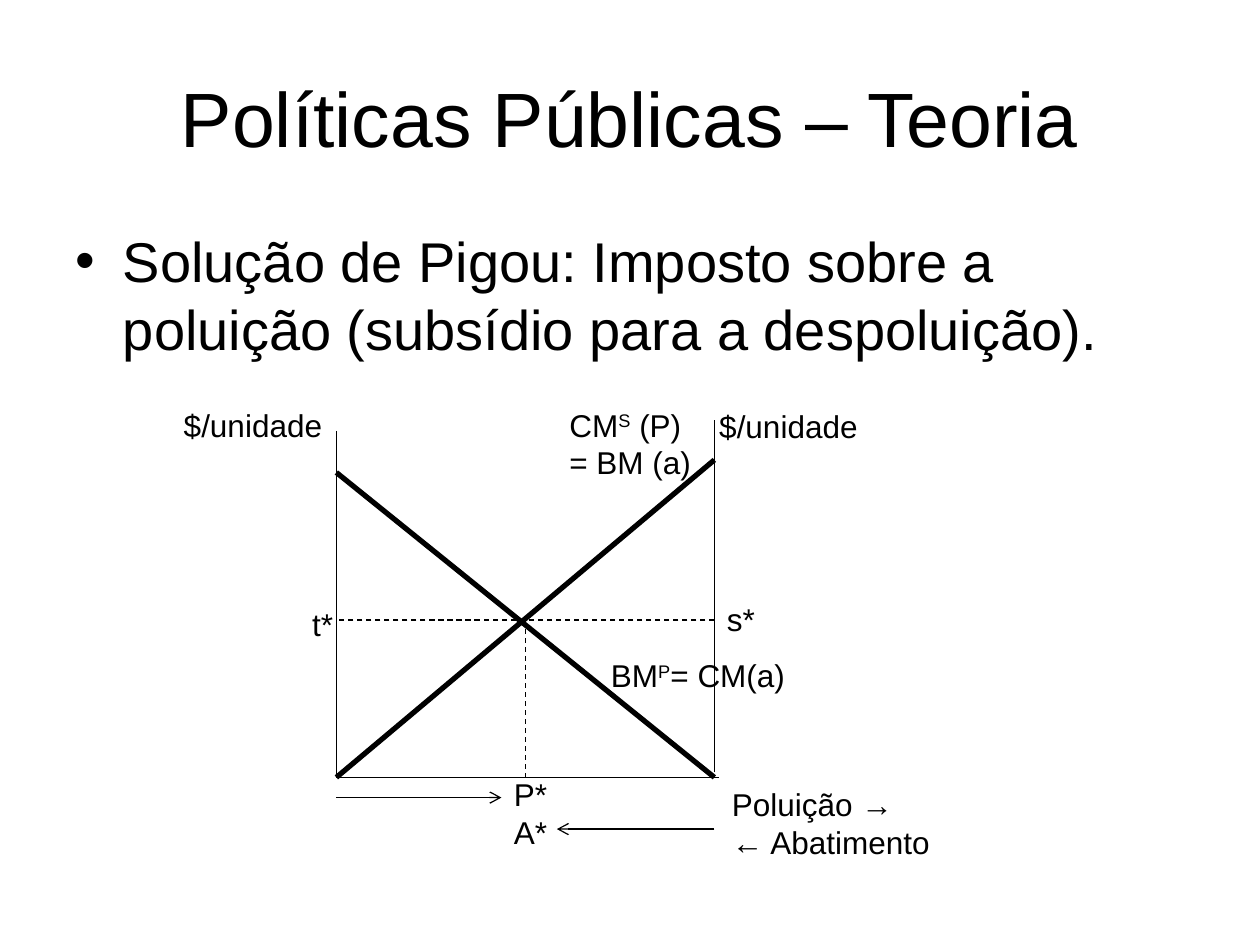
from lxml import etree
from pptx import Presentation
from pptx.dml.color import RGBColor
from pptx.enum.dml import MSO_LINE
from pptx.enum.shapes import MSO_CONNECTOR
from pptx.enum.text import MSO_ANCHOR, MSO_AUTO_SIZE, PP_ALIGN
from pptx.oxml.ns import qn
from pptx.util import Inches, Pt

STRAIGHT = MSO_CONNECTOR.STRAIGHT
DASH = MSO_LINE.DASH
COLORS = {"ink": "000000", "background": "FFFFFF"}
FONT = "Arial"

TITLE = "Políticas Públicas – Teoria"
BODY = "Solução de Pigou: Imposto sobre a poluição (subsídio para a despoluição)."

# Key coordinates of the diagram, in inches
LEFT, RIGHT, BASE = 2.67, 5.67, 6.17
MIDDLE, OPTIMUM = (LEFT + RIGHT) / 2, 4.92
THIN, THICK = 0.75, 3

# start, end, width, dash style, arrowhead at the end
LINES = [
    ((LEFT, 3.42), (LEFT, BASE), THIN, None, False),
    ((LEFT, BASE), (5.71, BASE), THIN, None, False),
    ((LEFT, 3.75), (RIGHT, BASE), THICK, None, False),
    ((LEFT, BASE), (RIGHT, 3.65), THICK, None, False),
    ((MIDDLE, OPTIMUM), (MIDDLE, BASE), THIN, DASH, False),
    ((RIGHT, OPTIMUM), (LEFT, OPTIMUM), THIN, DASH, False),
    ((RIGHT, 6.13), (RIGHT, 3.33), THIN, None, False),
    ((LEFT, 6.33), (3.98, 6.33), THIN, None, True),
    ((RIGHT, 6.58), (4.42, 6.58), THIN, None, True),
]

# left, top, width, lines of runs; every second run of a line is superscript
LABELS = [
    (3.98, 6.1, 0.47, [["P*"], ["A*"]]),
    (2.38, 4.75, 0.37, [["t*"]]),
    (4.75, 5.16, 1.61, [["BM", "P", "= CM(a)"]]),
    (4.42, 3.17, 1.18, [["CM", "S", " (P)"], ["= BM (a)"]]),
    (5.71, 6.18, 1.78, [["Poluição →"], ["← Abatimento"]]),
    (1.36, 3.17, 1.31, [["$/unidade"]]),
    (5.67, 4.71, 0.43, [["s*"]]),
    (5.61, 3.18, 1.31, [["$/unidade"]]),
]
LABEL_HEIGHTS = {1: 0.4, 2: 0.71}


def add_run(paragraph, text, size, superscript=False):
    run = paragraph.add_run()
    run.text = text
    run.font.name = FONT
    run.font.size = Pt(size)
    run.font.color.rgb = RGBColor.from_string(COLORS["ink"])
    if superscript:
        run.font._element.set("baseline", "30000")


def fill_placeholder(shape, box, text, size):
    shape.left, shape.top, shape.width, shape.height = map(Inches, box)
    frame = shape.text_frame
    frame.auto_size = MSO_AUTO_SIZE.NONE
    add_run(frame.paragraphs[0], text, size)
    return frame


def add_line(slide, start, end, width, dash, arrow):
    connector = slide.shapes.add_connector(STRAIGHT, *map(Inches, start + end))
    connector.line.width = Pt(width)
    connector.line.color.rgb = RGBColor.from_string(COLORS["ink"])
    if dash:
        connector.line.dash_style = dash
    if arrow:
        etree.SubElement(connector.line._get_or_add_ln(), qn("a:tailEnd"), type="arrow")
    etree.SubElement(connector._element.spPr, qn("a:effectLst"))


def add_label(slide, left, top, width, lines):
    box = slide.shapes.add_textbox(
        *map(Inches, (left, top, width, LABEL_HEIGHTS[len(lines)])))
    frame = box.text_frame
    frame.word_wrap = False
    frame.auto_size = MSO_AUTO_SIZE.SHAPE_TO_FIT_TEXT
    for index, runs in enumerate(lines):
        paragraph = frame.add_paragraph() if index else frame.paragraphs[0]
        for position, text in enumerate(runs):
            add_run(paragraph, text, 18, superscript=position % 2 == 1)


def main():
    presentation = Presentation()
    presentation.slide_width, presentation.slide_height = Inches(10), Inches(7.5)
    slide = presentation.slides.add_slide(presentation.slide_layouts[1])
    slide.background.fill.solid()
    slide.background.fill.fore_color.rgb = RGBColor.from_string(COLORS["background"])

    title = fill_placeholder(slide.shapes.title, (0.5, 0.3, 9, 1.25), TITLE, 44)
    title.vertical_anchor = MSO_ANCHOR.MIDDLE
    title.paragraphs[0].alignment = PP_ALIGN.CENTER
    fill_placeholder(slide.placeholders[1], (0.5, 1.75, 9, 4.95), BODY, 32)

    for line in LINES:
        add_line(slide, *line)
    for label in LABELS:
        add_label(slide, *label)
    presentation.save("out.pptx")


if __name__ == "__main__":
    main()
